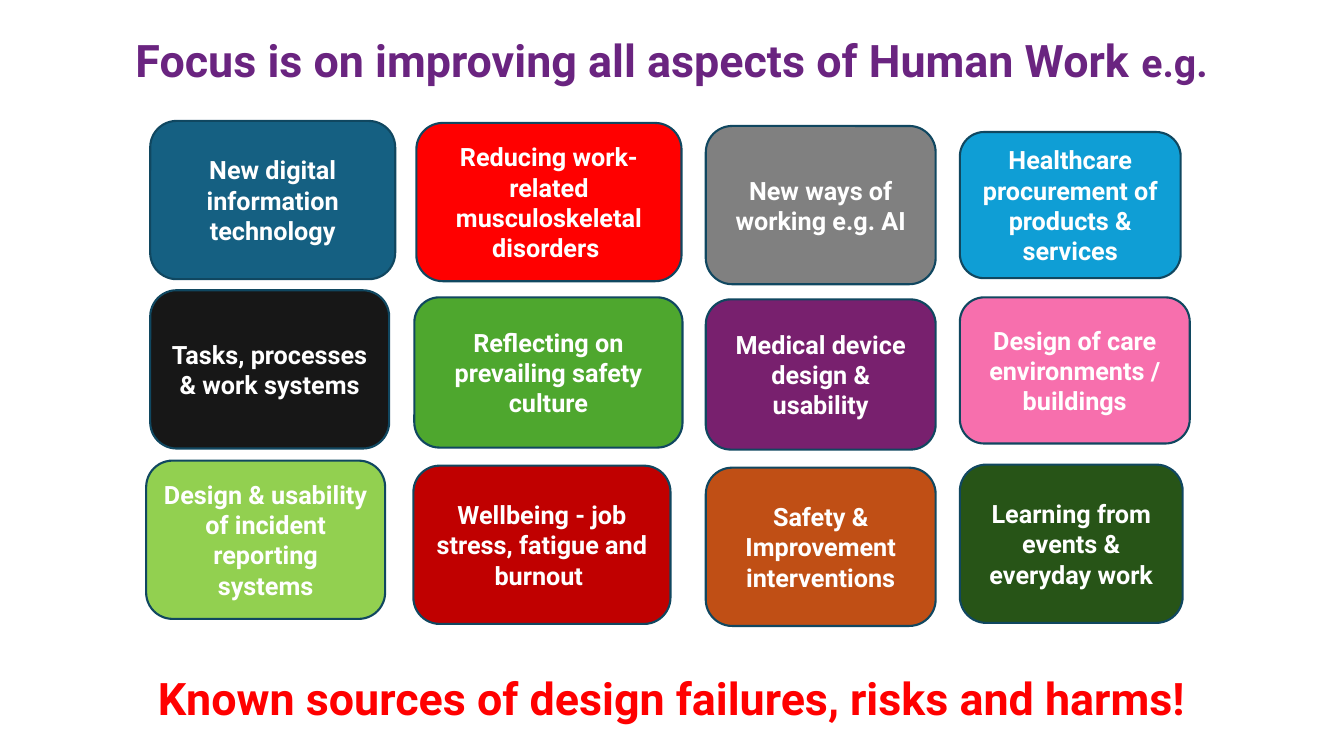
import dataclasses

import pptx
import pptx.dml.color
import pptx.enum.shapes
import pptx.enum.text
import pptx.util

Inches = pptx.util.Inches
Pt = pptx.util.Pt
RGBColor = pptx.dml.color.RGBColor

FONT = "Roboto"
WHITE = RGBColor(0xFF, 0xFF, 0xFF)
RED = RGBColor(0xFF, 0x00, 0x00)
TITLE_PURPLE = RGBColor(0x6A, 0x24, 0x80)
OUTLINE = RGBColor(0x10, 0x47, 0x60)
TEAL = RGBColor(0x15, 0x60, 0x82)
GRAY = RGBColor(0x80, 0x80, 0x80)
SKY = RGBColor(0x0F, 0x9E, 0xD5)
BLACK = RGBColor(0x17, 0x17, 0x17)
GREEN = RGBColor(0x4E, 0xA7, 0x2E)
PLUM = RGBColor(0x78, 0x20, 0x6E)
PINK = RGBColor(0xF7, 0x6F, 0xAD)
LIME = RGBColor(0x92, 0xD0, 0x50)
DARK_RED = RGBColor(0xC0, 0x00, 0x00)
ORANGE = RGBColor(0xC0, 0x4F, 0x15)
DARK_GREEN = RGBColor(0x27, 0x54, 0x17)


@dataclasses.dataclass(frozen=True)
class Card:
    text: str
    fill: RGBColor
    left: float
    top: float
    width: float
    height: float = 1.57


# Hand-placed cards, row by row
CARDS = [
    Card("New digital information technology", TEAL, 1.49, 1.2, 2.43),
    Card("Reducing work-related musculoskeletal disorders ", RED, 4.13, 1.22, 2.63),
    Card("New ways of working e.g. AI", GRAY, 7, 1.25, 2.28),
    Card("Healthcare procurement of products & services", SKY, 9.52, 1.31, 2.19, 1.45),
    Card("Tasks, processes & work systems", BLACK, 1.49, 2.88, 2.37),
    Card("Reflecting on prevailing safety culture", GREEN, 4.11, 2.95, 2.66, 1.49),
    Card("Medical device design & usability", PLUM, 7, 2.97, 2.28, 1.49),
    Card("Design of care environments / buildings", PINK, 9.52, 2.95, 2.28, 1.45),
    Card("Design & usability of incident reporting systems", LIME, 1.45, 4.57, 2.37),
    Card("Wellbeing - job stress, fatigue and burnout ", DARK_RED, 4.1, 4.62, 2.55),
    Card("Safety & Improvement interventions", ORANGE, 7, 4.64, 2.28),
    Card("Learning from events & everyday work", DARK_GREEN, 9.52, 4.61, 2.21),
]


def add_text(p, text: str, *, size: float, color: RGBColor, bold: bool = True) -> None:
    """Append a formatted run to a paragraph."""
    r = p.add_run()
    r.text = text
    r.font.name = FONT
    r.font.size = Pt(size)
    r.font.bold = bold
    r.font.color.rgb = color


def centered_paragraph(sp):
    """Center a shape's text both ways and return its first paragraph."""
    tf = sp.text_frame
    tf.word_wrap = True
    tf.vertical_anchor = pptx.enum.text.MSO_ANCHOR.MIDDLE
    p = tf.paragraphs[0]
    p.alignment = pptx.enum.text.PP_ALIGN.CENTER
    return p


def add_heading(s, left: float, top: float, width: float, height: float):
    """Add a full-width heading box and return its paragraph."""
    sp = s.shapes.add_textbox(Inches(left), Inches(top), Inches(width), Inches(height))
    p = centered_paragraph(sp)
    p.line_spacing = 0.9
    return p


def add_card(s, card: Card) -> None:
    """Add one rounded, outlined card."""
    sp = s.shapes.add_shape(
        pptx.enum.shapes.MSO_SHAPE.ROUNDED_RECTANGLE,
        Inches(card.left), Inches(card.top), Inches(card.width), Inches(card.height),
    )
    sp.shadow.inherit = False
    sp.fill.solid()
    sp.fill.fore_color.rgb = card.fill
    sp.line.color.rgb = OUTLINE
    sp.line.width = Pt(1.5)
    add_text(centered_paragraph(sp), card.text, size=18, color=WHITE)


def main() -> None:
    prs = pptx.Presentation()
    prs.slide_width = Inches(13.33)
    prs.slide_height = Inches(7.5)
    s = prs.slides.add_slide(prs.slide_layouts[6])

    # Title
    p = add_heading(s, 0.1, 0, 13.12, 1.25)
    add_text(p, "Focus is on improving all aspects of Human Work ", size=32, color=TITLE_PURPLE)
    add_text(p, "e.g.", size=28, color=TITLE_PURPLE)

    # Cards
    for card in CARDS:
        add_card(s, card)

    # Closing message
    p = add_heading(s, 0, 6.33, 13.33, 1.25)
    add_text(p, "Known sources of design failures, risks and harms!", size=32, color=RED)

    prs.save("out.pptx")


if __name__ == "__main__":
    main()
